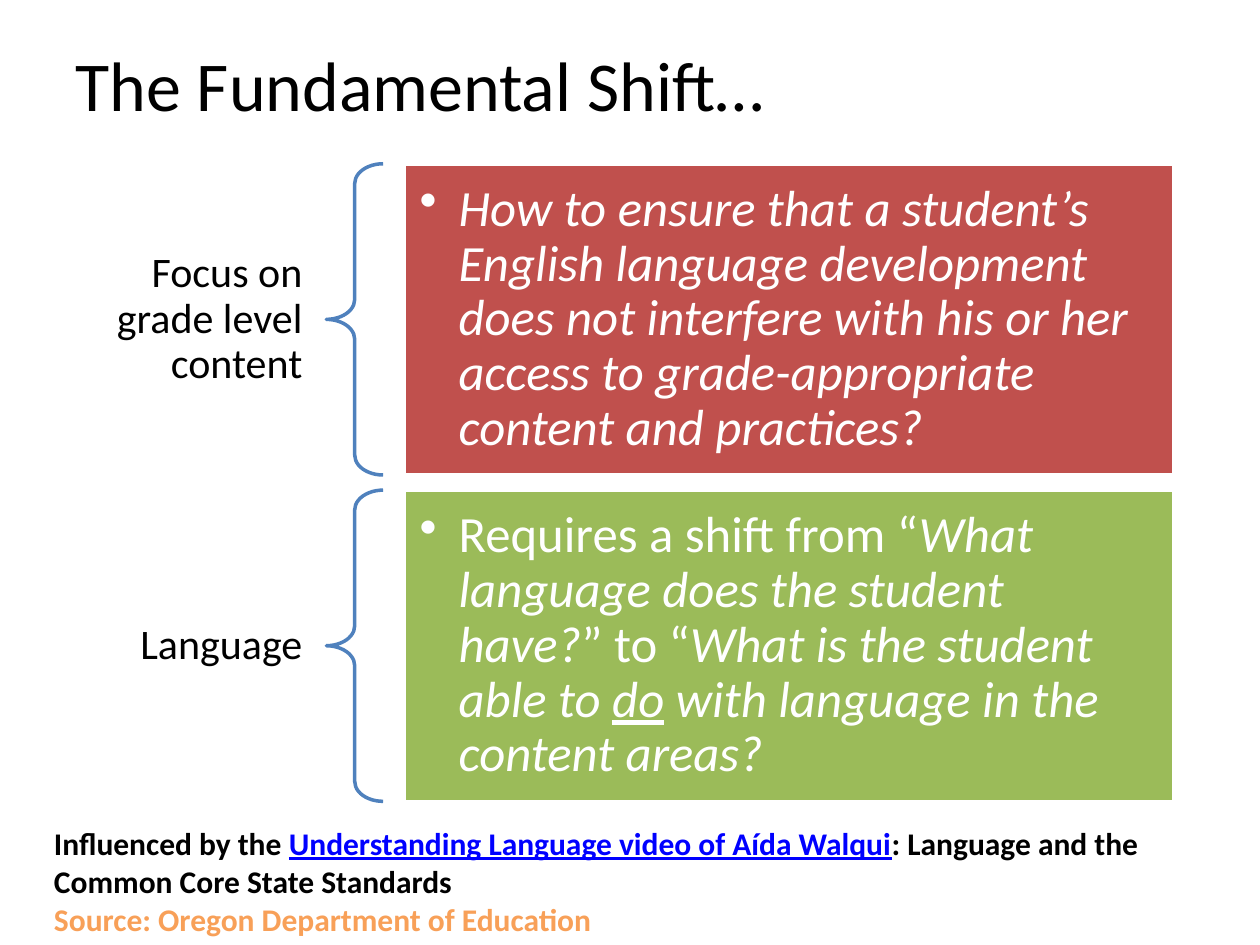
from pptx import Presentation
from pptx.dml.color import RGBColor
from pptx.enum.shapes import MSO_SHAPE
from pptx.enum.text import MSO_ANCHOR, PP_ALIGN
from pptx.util import Inches, Pt
from lxml import etree

LEFT, RIGHT = PP_ALIGN.LEFT, PP_ALIGN.RIGHT
TOP, MIDDLE = MSO_ANCHOR.TOP, MSO_ANCHOR.MIDDLE
RECTANGLE, LEFT_BRACE = MSO_SHAPE.RECTANGLE, MSO_SHAPE.LEFT_BRACE

FONT = "Calibri"
BLACK, WHITE = "000000", "FFFFFF"
BLUE, RED, GREEN = "4F81BD", "C0504D", "9BBB59"
LINK_BLUE, ORANGE = "0000FF", "F8A058"

# Columns of a row: (offset, width) in inches from the row's left edge
LABEL_COLUMN, BRACE_COLUMN, CARD_COLUMN = (0, 2.25), (2.25, 0.45), (2.87, 6.11)
ROWS_LEFT, ROWS_TOP, ROW_HEIGHT, ROW_GAP = 0.34, 1.3, 2.47, 0.12

ITALIC = {"italic": True}
ROWS = [
    ("Focus on grade level content", RED, [
        ("How to ensure that a student’s English language development does not "
         "interfere with his or her access to grade-appropriate content and "
         "practices?", ITALIC)]),
    ("Language", GREEN, [
        ("Requires a shift from “", {}),
        ("What language does the student have?", ITALIC),
        ("” to “", {}),
        ("What is the student able to ", ITALIC),
        ("do", {"italic": True, "underline": True}),
        (" with language in the content areas?", ITALIC)]),
]
CREDITS = [
    [("Influenced by the ", {}),
     ("Understanding Language video of Aída Walqui",
      {"color": LINK_BLUE, "underline": True}),
     (": Language and the Common Core State Standards", {})],
    [("Source: Oregon Department of Education", {"color": ORANGE})],
]


def rgb(value):
    return RGBColor.from_string(value)


def inches(*lengths):
    return [Inches(length) for length in lengths]


def set_frame(box, anchor, side=0.1, end=0.05):
    frame = box.text_frame
    frame.word_wrap = True
    frame.vertical_anchor = anchor
    frame.margin_left = frame.margin_right = Inches(side)
    frame.margin_top = frame.margin_bottom = Inches(end)
    return frame


def add_spans(para, spans, size, color=BLACK, bold=False, align=LEFT):
    para.alignment = align
    for text, style in spans:
        span = para.add_run()
        span.text = text
        font = span.font
        font.name, font.size, font.bold = FONT, Pt(size), bold
        font.italic = style.get("italic", False)
        font.underline = style.get("underline", False)
        font.color.rgb = rgb(style.get("color", color))


def add_bullet(para, indent):
    properties = para._p.get_or_add_pPr()
    properties.set("marL", str(Inches(indent)))
    properties.set("indent", str(-Inches(indent)))
    namespace = properties.nsmap["a"]
    bullet = etree.SubElement(properties, f"{{{namespace}}}buChar")
    bullet.set("char", "•")


def add_outlined(page, kind, line, left, top, width, height):
    shape = page.shapes.add_shape(kind, *inches(left, top, width, height))
    shape.shadow.inherit = False
    shape.line.color.rgb = rgb(line)
    shape.line.width = Pt(2)
    return shape


def place_title(page, left, top, width, height):
    title = page.shapes.title
    title.left, title.top, title.width, title.height = inches(left, top, width, height)
    frame = set_frame(title, MIDDLE)
    add_spans(frame.paragraphs[0], [("The Fundamental Shift…", {})], 40)


def add_focus_row(page, left, top, height, label, fill, spans):
    # Label
    offset, width = LABEL_COLUMN
    box = page.shapes.add_textbox(*inches(left + offset, top, width, height))
    para = set_frame(box, MIDDLE, 0.19, 0.07).paragraphs[0]
    para.line_spacing = 0.9
    add_spans(para, [(label, {})], 24, align=RIGHT)

    # Brace
    offset, width = BRACE_COLUMN
    brace = add_outlined(page, LEFT_BRACE, BLUE, left + offset, top, width, height)
    brace.fill.background()
    brace.adjustments[0], brace.adjustments[1] = 0.35, 0.5

    # Card
    offset, width = CARD_COLUMN
    card = add_outlined(page, RECTANGLE, WHITE, left + offset, top, width, height)
    card.fill.solid()
    card.fill.fore_color.rgb = rgb(fill)
    para = set_frame(card, MIDDLE, 0.12, 0.12).paragraphs[0]
    para.line_spacing = 0.9
    add_bullet(para, 0.31)
    add_spans(para, spans, 29, WHITE)


def add_credits(page, left, top, width, height):
    box = page.shapes.add_textbox(*inches(left, top, width, height))
    frame = set_frame(box, TOP)
    for index, spans in enumerate(CREDITS):
        para = frame.add_paragraph() if index else frame.paragraphs[0]
        add_spans(para, spans, 18, bold=True)


def main():
    deck = Presentation()
    deck.slide_width, deck.slide_height = inches(10, 7.5)
    page = deck.slides.add_slide(deck.slide_layouts[5])
    place_title(page, 0.5, 0.25, 7.42, 0.83)
    for index, row in enumerate(ROWS):
        top = ROWS_TOP + index * (ROW_HEIGHT + ROW_GAP)
        add_focus_row(page, ROWS_LEFT, top, ROW_HEIGHT, *row)
    add_credits(page, 0.33, 6.49, 9.08, 1.01)
    deck.save("out.pptx")


if __name__ == "__main__":
    main()
